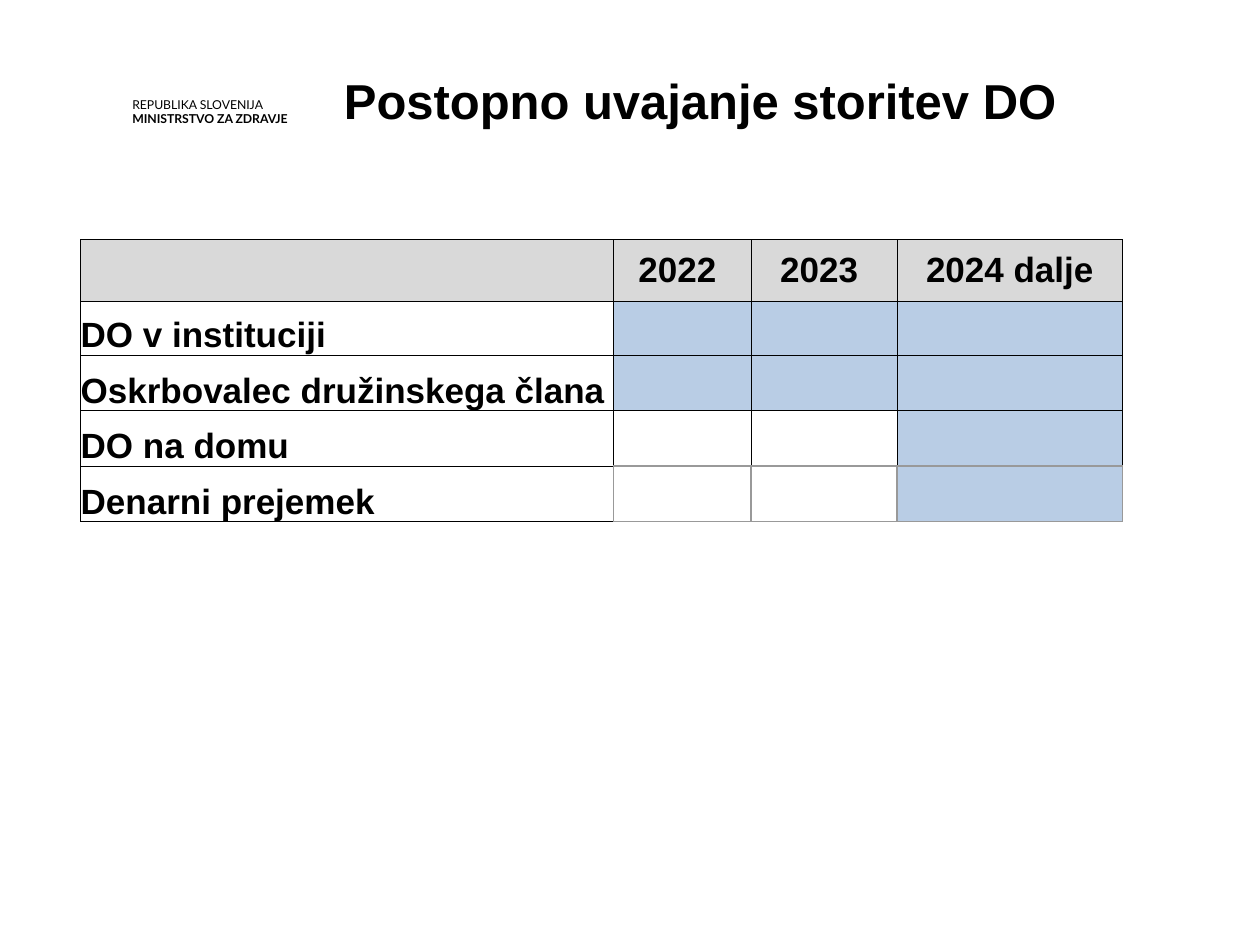
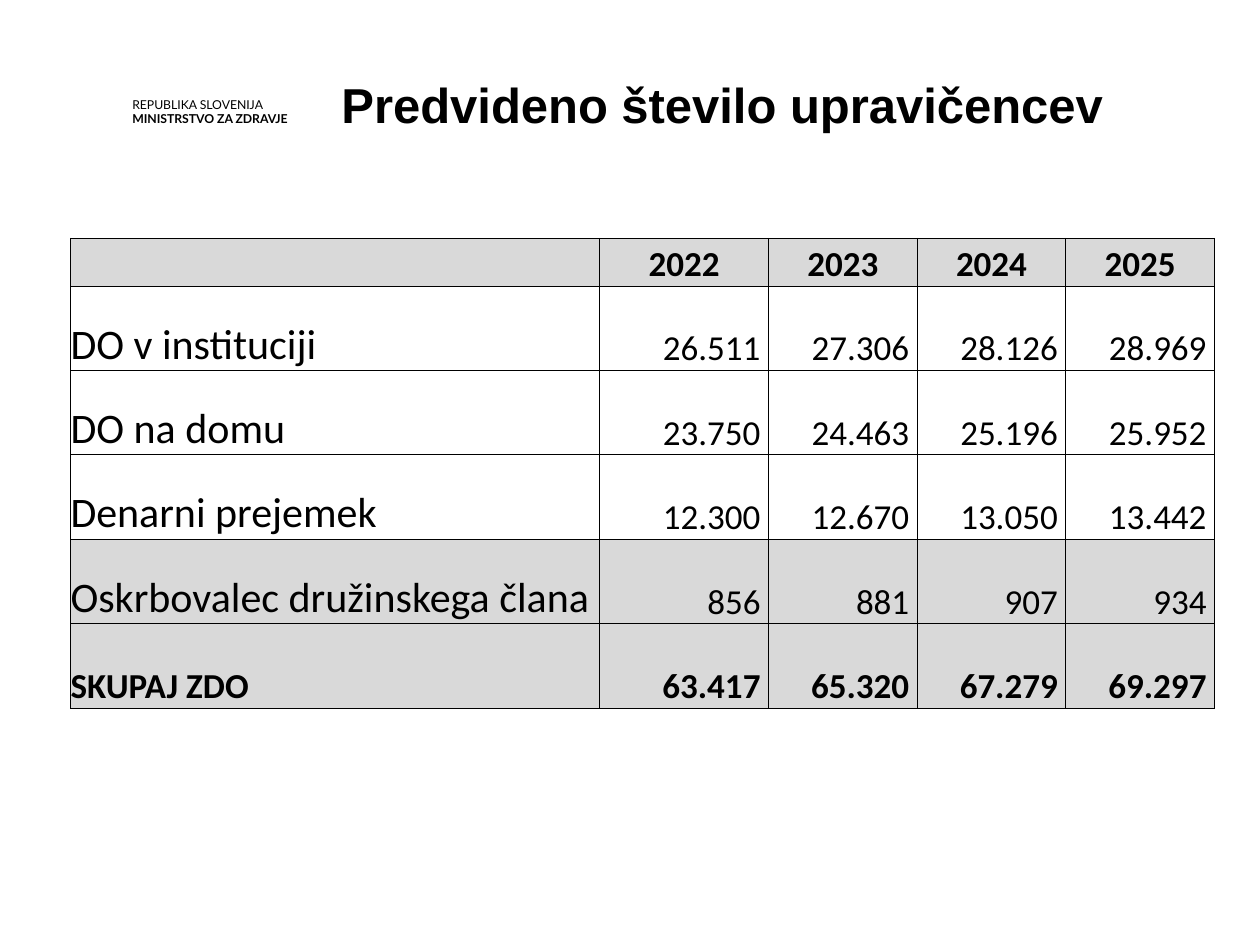
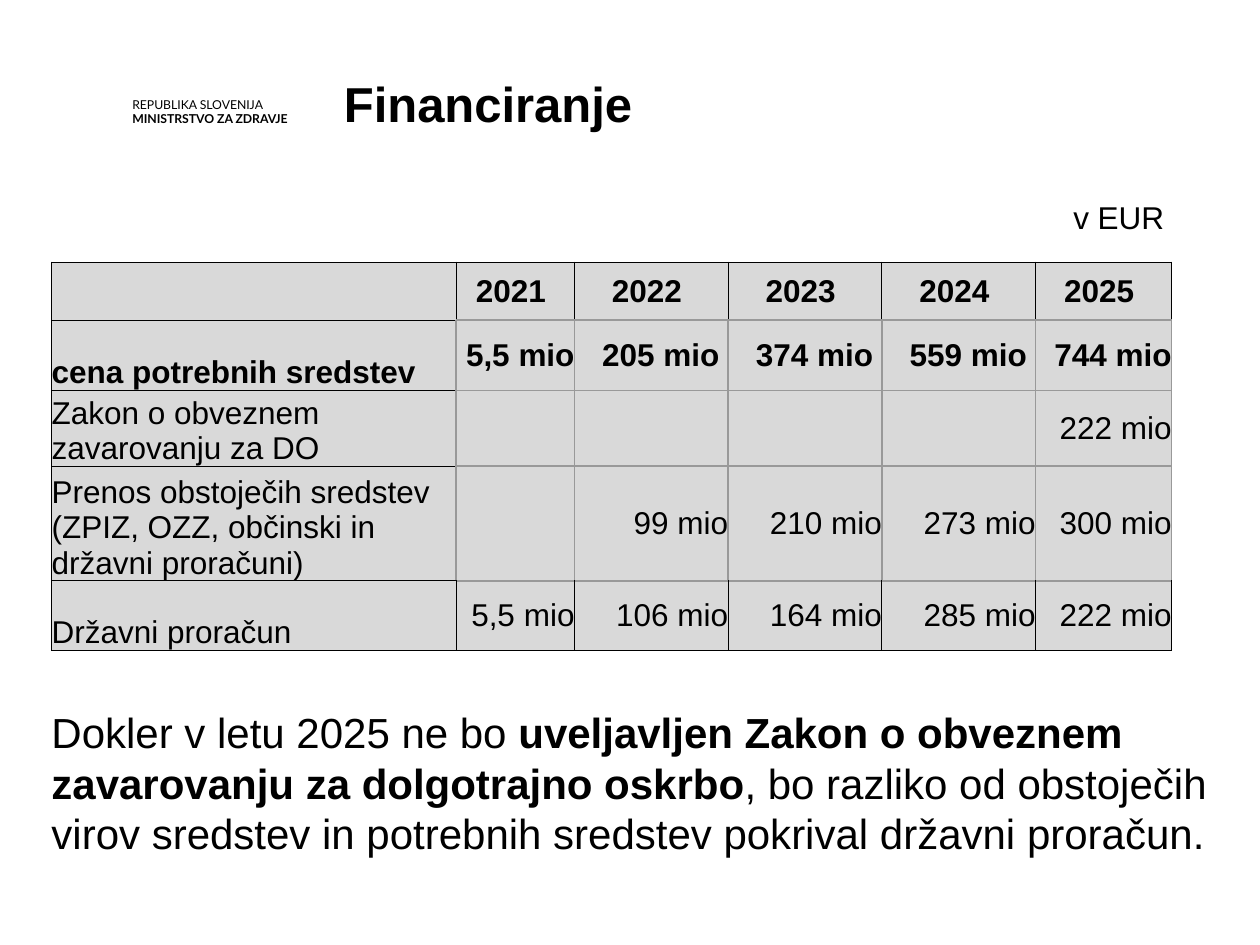
from lxml import etree
from pptx import Presentation
from pptx.dml.color import RGBColor
from pptx.enum.shapes import MSO_SHAPE
from pptx.enum.text import MSO_ANCHOR, PP_ALIGN
from pptx.oxml.ns import qn
from pptx.util import Inches, Pt

BLACK = RGBColor(0x00, 0x00, 0x00)
WHITE = RGBColor(0xFF, 0xFF, 0xFF)
GRAY = RGBColor(0xD9, 0xD9, 0xD9)
RULE = RGBColor(0x99, 0x99, 0x99)
BLUE = RGBColor(0xB9, 0xCD, 0xE5)
RECT = MSO_SHAPE.RECTANGLE
TOP, MID, LOW = MSO_ANCHOR.TOP, MSO_ANCHOR.MIDDLE, MSO_ANCHOR.BOTTOM
LEFT, MIDST, RIGHT = PP_ALIGN.LEFT, PP_ALIGN.CENTER, PP_ALIGN.RIGHT


def write(para, text, size, font="Arial", bold=False, align=LEFT):
    run = para.add_run()
    run.text = text
    run.font.size = Pt(size)
    run.font.name = font
    run.font.bold = bold
    run.font.color.rgb = BLACK
    para.alignment = align


def grid(slide, left, top, cols, rows, data, size, soft=(), shade=(0,),
         bold=(0,), font="Arial", anchor=MID, label=None):
    """Add a ruled table; the value cells of the soft rows get gray rules."""
    frame = slide.shapes.add_table(
        len(rows), len(cols), Inches(left), Inches(top),
        Inches(sum(cols)), Inches(sum(rows)))
    table = frame.table
    table.first_row = table.horz_banding = False
    for col, width in zip(table.columns, cols):
        col.width = Inches(width)
    for row, height in zip(table.rows, rows):
        row.height = Inches(height)

    for r, line in enumerate(data):
        for c, text in enumerate(line):
            cell = table.cell(r, c)
            cell.margin_left = cell.margin_right = 0
            cell.margin_top = cell.margin_bottom = 0
            cell.vertical_anchor = anchor if c else LOW
            props = cell._tc.get_or_add_tcPr()
            near = {"lnL": (r, c - 1), "lnR": (r, c + 1),
                    "lnT": (r - 1, c), "lnB": (r + 1, c)}
            for side, (y, x) in near.items():
                pale = (r in soft and c > 0) or (y in soft and x > 0)
                edge = etree.SubElement(props, qn("a:" + side),
                                        w=str(Pt(1 if pale else 0.5)))
                fill = etree.SubElement(edge, qn("a:solidFill"))
                etree.SubElement(fill, qn("a:srgbClr"),
                                 val=str(RULE if pale else BLACK))
            cell.fill.solid()
            cell.fill.fore_color.rgb = GRAY if r in shade else WHITE
            if text:
                big = label and c == 0 and r not in bold
                align = LEFT if c == 0 else MIDST if r == 0 else RIGHT
                write(cell.text_frame.paragraphs[0], text,
                      label if big else size, font, r in bold, align)
    return table


deck = Presentation()
deck.slide_width, deck.slide_height = Inches(10), Inches(7.5)

# Ministry mark and title on every slide
titles = [
    ("Postopno uvajanje storitev DO", 2.73, 0.56),
    ("Predvideno število upravičencev", 2.71, 0.59),
    ("Financiranje", 2.73, 0.58),
]
for title, left, top in titles:
    slide = deck.slides.add_slide(deck.slide_layouts[6])
    mark = slide.shapes.add_textbox(
        Inches(1.05), Inches(0.77), Inches(1.32), Inches(0.22))
    head = slide.shapes.add_shape(
        RECT, Inches(left), Inches(top), Inches(7.19), Inches(0.8))
    head.shadow.inherit = False
    head.fill.solid()
    head.fill.fore_color.rgb = WHITE
    head.line.fill.background()
    for shape in (mark, head):
        frame = shape.text_frame
        frame.word_wrap = True
        frame.vertical_anchor = TOP
        frame.margin_left = frame.margin_right = 0
        frame.margin_top = frame.margin_bottom = 0
    write(head.text_frame.paragraphs[0], title, 28, bold=True)
    first = mark.text_frame.paragraphs[0]
    second = mark.text_frame.add_paragraph()
    write(first, "REPUBLIKA SLOVENIJA", 7, "Lato")
    write(second, "MINISTRSTVO ZA ZDRAVJE", 7, "Lato", True)
    first.line_spacing = second.line_spacing = Pt(8.4)

phase, count, money = deck.slides

# Services by year of start
plan = grid(
    phase, 0.64, 1.9, [4.23, 1.09, 1.16, 1.79], [0.49, 0.43] + [0.44] * 3,
    [["", "2022 ", "2023 ", "2024 dalje"],
     ["DO v instituciji", "", "", ""],
     ["Oskrbovalec družinskega člana", "", "", ""],
     ["DO na domu", "", "", ""],
     ["Denarni prejemek", "", "", ""]],
    20, soft=(4,), bold=range(5))
for row, start in enumerate([1, 1, 3, 3], 1):
    for col in range(start, 4):
        plan.cell(row, col).fill.fore_color.rgb = BLUE

# Expected number of users
grid(
    count, 0.56, 1.89, [4.2, 1.34] + [1.18] * 3, [0.38] + [0.67] * 5,
    [["", "2022", "2023", "2024", "2025"],
     ["DO v instituciji", "26.511 ", "27.306 ", "28.126 ", "28.969 "],
     ["DO na domu", "23.750 ", "24.463 ", "25.196 ", "25.952 "],
     ["Denarni prejemek", "12.300 ", "12.670 ", "13.050 ", "13.442 "],
     ["Oskrbovalec družinskega člana", "856 ", "881 ", "907 ", "934 "],
     ["SKUPAJ ZDO", "63.417 ", "65.320 ", "67.279 ", "69.297 "]],
    20, shade=(0, 4, 5), bold=(0, 5), font="Calibri", anchor=LOW, label=24)

# Funds by source
grid(
    money, 0.41, 2.08, [3.21, 0.94] + [1.22] * 3 + [1.08],
    [0.46, 0.56, 0.6, 0.91, 0.55],
    [["", "2021 ", "2022 ", "2023 ", "2024 ", "2025 "],
     ["cena potrebnih sredstev", "5,5 mio", "205 mio ", "374 mio ",
      "559 mio ", "744 mio"],
     ["Zakon o obveznem zavarovanju za DO", "", "", "", "", "222 mio"],
     ["Prenos obstoječih sredstev (ZPIZ, OZZ, občinski in državni proračuni)",
      "", "99 mio", "210 mio", "273 mio", "300 mio"],
     ["Državni proračun", "5,5 mio", "106 mio", "164 mio", "285 mio",
      "222 mio"]],
    18, soft=(1, 2, 3), shade=range(5), bold=(0, 1))

note = money.shapes.add_textbox(
    Inches(0.31), Inches(5.56), Inches(9.92), Inches(1.34))
unit = money.shapes.add_textbox(
    Inches(8.42), Inches(1.52), Inches(1.13), Inches(0.4))
for box in (note, unit):
    box.text_frame.word_wrap = True
para = note.text_frame.paragraphs[0]
write(para, "Dokler v letu 2025 ne bo ", 24)
write(para, "uveljavljen Zakon o obveznem zavarovanju za dolgotrajno oskrbo",
      24, bold=True)
write(para, ", bo razliko od obstoječih virov sredstev in potrebnih sredstev "
      "pokrival državni proračun.", 24)
write(unit.text_frame.paragraphs[0], "v EUR", 18)

deck.save("out.pptx")
